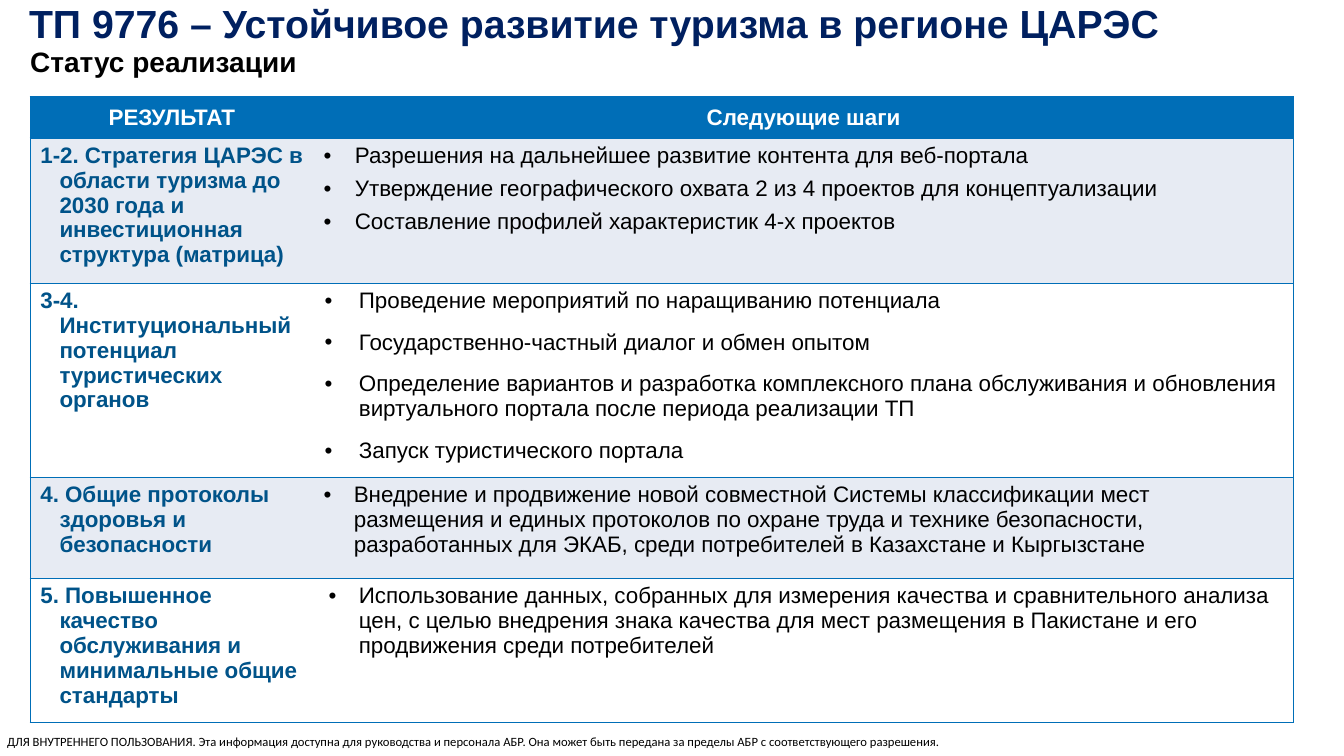
from dataclasses import dataclass

from lxml import etree
from pptx import Presentation
from pptx import util as u
from pptx.dml.color import RGBColor
from pptx.enum import text
from pptx.oxml import ns

COLORS = {
    "title": "002060",
    "black": "000000",
    "white": "FFFFFF",
    "header": "006EB7",
    "result": "005389",
    "band": "E7EBF3",
}
COLUMN_WIDTHS = (2.81, 9.72)
HEADER_HEIGHT = 0.41
HEADINGS = ("РЕЗУЛЬТАТ", "Следующие шаги")
RESULT_INDENT = 0.19


@dataclass(frozen=True)
class Style:
    size: float
    color: str
    bold: bool = False
    font: str = "Arial"


@dataclass(frozen=True)
class Caption:
    words: str
    box: tuple[float, float, float, float]
    style: Style
    inset: bool = True


@dataclass(frozen=True)
class ResultRow:
    result: str
    steps: tuple[str, ...]
    height: float
    fill: str
    indent: float
    hanging: float
    space_after: float = 12


CAPTIONS = (
    Caption("ДЛЯ ВНУТРЕННЕГО ПОЛЬЗОВАНИЯ. Эта информация доступна для руководства и персонала АБР. "
            "Она может быть передана за пределы АБР с соответствующего разрешения.",
            (0.07, 7.28, 11.2, 0.15), Style(9, "black", font="Calibri"), inset=False),
    Caption("ТП 9776 – Устойчивое развитие туризма в регионе ЦАРЭС",
            (0.19, -0.06, 12.75, 0.57), Style(28, "title", True)),
    Caption("Статус реализации", (0.2, 0.39, 9.11, 0.44), Style(20, "black", True)),
)

ROWS = (
    ResultRow("1-2. Стратегия ЦАРЭС в области туризма до 2030 года и инвестиционная структура (матрица)",
              ("Разрешения на дальнейшее развитие контента для веб-портала",
               "Утверждение географического охвата 2 из 4 проектов для концептуализации",
               "Составление профилей характеристик 4-х проектов"),
              1.44, "band", 0.31, 0.31, 6),
    ResultRow("3-4. Институциональный потенциал туристических органов",
              ("Проведение мероприятий по наращиванию потенциала",
               "Государственно-частный диалог и обмен опытом",
               "Определение вариантов и разработка комплексного плана обслуживания и обновления "
               "виртуального портала после периода реализации ТП",
               "Запуск туристического портала"),
              1.93, "white", 0.35, 0.34),
    ResultRow("4. Общие протоколы здоровья и безопасности",
              ("Внедрение и продвижение новой совместной Системы классификации мест размещения "
               "и единых протоколов по охране труда и технике безопасности, разработанных для ЭКАБ, "
               "среди потребителей в Казахстане и Кыргызстане",),
              1.0, "band", 0.3, 0.3),
    ResultRow("5. Повышенное качество обслуживания и минимальные общие стандарты",
              ("Использование данных, собранных для измерения качества и сравнительного анализа цен, "
               "с целью внедрения знака качества для мест размещения в Пакистане и его продвижения "
               "среди потребителей",),
              1.43, "white", 0.35, 0.3),
)


def add_run(paragraph, words: str, style: Style) -> None:
    run = paragraph.add_run()
    run.text = words
    run.font.name = style.font
    run.font.size = u.Pt(style.size)
    run.font.bold = style.bold
    run.font.color.rgb = RGBColor.from_string(COLORS[style.color])


def add_caption(slide, caption: Caption) -> None:
    shape = slide.shapes.add_textbox(*map(u.Inches, caption.box))
    frame = shape.text_frame
    frame.word_wrap = True
    if not caption.inset:
        frame.margin_left = frame.margin_right = frame.margin_top = frame.margin_bottom = 0
    add_run(frame.paragraphs[0], caption.words, caption.style)


def set_indent(paragraph, left: float, hanging: float) -> None:
    properties = paragraph._p.get_or_add_pPr()
    properties.set("marL", str(u.Inches(left)))
    properties.set("indent", str(-u.Inches(hanging)))


def add_bullet(paragraph) -> None:
    properties = paragraph._p.get_or_add_pPr()
    etree.SubElement(properties, ns.qn("a:buFont")).set("typeface", "Arial")
    etree.SubElement(properties, ns.qn("a:buChar")).set("char", "•")


def format_cell(cell, fill: str, drawn_sides: str) -> None:
    properties = cell._tc.get_or_add_tcPr()
    for side in "LRTB":
        line = etree.SubElement(properties, ns.qn(f"a:ln{side}"), w=str(u.Pt(1)))
        if side in drawn_sides:
            solid = etree.SubElement(line, ns.qn("a:solidFill"))
            etree.SubElement(solid, ns.qn("a:srgbClr"), val=COLORS["header"])
        else:
            etree.SubElement(line, ns.qn("a:noFill"))
    cell.fill.solid()
    cell.fill.fore_color.rgb = RGBColor.from_string(COLORS[fill])


def add_results_table(slide) -> None:
    heights = [HEADER_HEIGHT] + [row.height for row in ROWS]
    table = slide.shapes.add_table(
        len(heights), len(COLUMN_WIDTHS), u.Inches(0.3), u.Inches(0.96),
        u.Inches(sum(COLUMN_WIDTHS)), u.Inches(sum(heights))).table
    table.first_row = table.horz_banding = False
    for column, width in zip(table.columns, COLUMN_WIDTHS):
        column.width = u.Inches(width)
    for table_row, height in zip(table.rows, heights):
        table_row.height = u.Inches(height)

    # Fills and borders: no line between the two columns
    fills = ["header"] + [row.fill for row in ROWS]
    for table_row, fill in zip(table.rows, fills):
        for cell, sides in zip(table_row.cells, ("LTB", "RTB")):
            format_cell(cell, fill, sides)

    # Header row
    for cell, heading in zip(table.rows[0].cells, HEADINGS):
        cell.vertical_anchor = text.MSO_ANCHOR.MIDDLE
        paragraph = cell.text_frame.paragraphs[0]
        paragraph.alignment = text.PP_ALIGN.CENTER
        add_run(paragraph, heading, Style(16, "white", True))

    # Results and their next steps
    for index, row in enumerate(ROWS, start=1):
        paragraph = table.cell(index, 0).text_frame.paragraphs[0]
        set_indent(paragraph, RESULT_INDENT, RESULT_INDENT)
        add_run(paragraph, row.result, Style(16, "result", True))
        frame = table.cell(index, 1).text_frame
        for number, step in enumerate(row.steps):
            paragraph = frame.add_paragraph() if number else frame.paragraphs[0]
            set_indent(paragraph, row.indent, row.hanging)
            paragraph.space_after = u.Pt(row.space_after)
            add_bullet(paragraph)
            add_run(paragraph, step, Style(16, "black"))


def main() -> None:
    presentation = Presentation()
    presentation.slide_width = u.Inches(13.33)
    presentation.slide_height = u.Inches(7.5)
    slide = presentation.slides.add_slide(presentation.slide_layouts[6])
    add_results_table(slide)
    for caption in CAPTIONS:
        add_caption(slide, caption)
    presentation.save("out.pptx")


if __name__ == "__main__":
    main()
